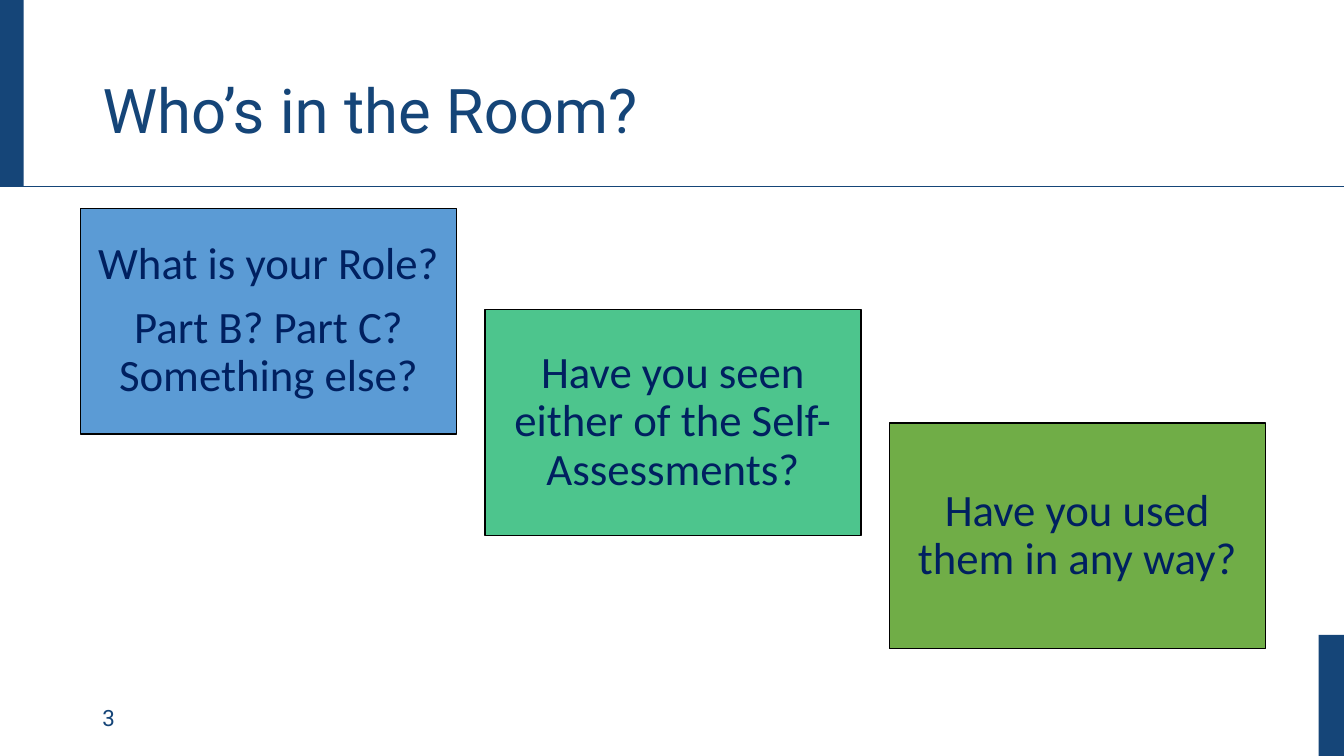
from lxml.etree import SubElement
from pptx import Presentation
from pptx.dml.color import RGBColor
from pptx.enum.shapes import MSO_CONNECTOR, MSO_SHAPE
from pptx.enum.text import MSO_ANCHOR, MSO_AUTO_SIZE, PP_ALIGN
from pptx.oxml.ns import qn
from pptx.util import Cm, Pt

COLORS = {
    "navy": "154578",
    "ink": "002060",
    "black": "000000",
    "blue": "5B9BD5",
    "mint": "4DC58D",
    "green": "70AD47",
}


def color(name):
    return RGBColor.from_string(COLORS[name])


def write_text(shape, paragraphs, *, size, font, ink, align=PP_ALIGN.LEFT,
               line_spacing=1.0, gap=0, margin=None):
    frame = shape.text_frame
    frame.word_wrap = True
    frame.auto_size = MSO_AUTO_SIZE.NONE
    frame.vertical_anchor = MSO_ANCHOR.MIDDLE
    if margin is not None:
        frame.margin_left = frame.margin_right = Cm(margin)
        frame.margin_top = frame.margin_bottom = Cm(margin)
    for index, content in enumerate(paragraphs):
        paragraph = frame.paragraphs[0] if index == 0 else frame.add_paragraph()
        paragraph.alignment = align
        paragraph.line_spacing = line_spacing
        paragraph.space_before = Pt(gap if index else 0)
        run = paragraph.add_run()
        run.text = content
        run.font.size = Pt(size)
        run.font.name = font
        run.font.color.rgb = color(ink)


class SlideBuilder:
    """Hold the style and the current slide, and add each kind of element."""

    heading_font = "Roboto"
    body_font = "Calibri"

    def __init__(self, presentation):
        self.slide = presentation.slides.add_slide(presentation.slide_layouts[5])

    def title(self, text, left, top, width, height):
        title = self.slide.shapes.title
        title.left, title.top = Cm(left), Cm(top)
        title.width, title.height = Cm(width), Cm(height)
        write_text(title, [text], size=44, font=self.heading_font, ink="navy",
                   line_spacing=0.9)

    def rectangle(self, left, top, width, height, fill, outline=None):
        shape = self.slide.shapes.add_shape(
            MSO_SHAPE.RECTANGLE, Cm(left), Cm(top), Cm(width), Cm(height))
        shape.shadow.inherit = False
        shape.fill.solid()
        shape.fill.fore_color.rgb = color(fill)
        if outline:
            shape.line.color.rgb = color(outline)
            shape.line.width = Pt(1)
        else:
            shape.line.fill.background()
        return shape

    def question(self, paragraphs, left, top, fill):
        card = self.rectangle(left, top, 9.48, 5.69, fill, outline="black")
        write_text(card, paragraphs, size=32, font=self.body_font, ink="ink",
                   align=PP_ALIGN.CENTER, line_spacing=0.9, gap=11, margin=0.33)

    def rule(self, left, right, top):
        line = self.slide.shapes.add_connector(
            MSO_CONNECTOR.STRAIGHT, Cm(left), Cm(top), Cm(right), Cm(top))
        line.line.color.rgb = color("navy")
        line.line.width = Pt(0.5)
        SubElement(line._element.spPr, qn("a:effectLst"))

    def page_number(self, number, left, top, width, height):
        box = self.slide.shapes.add_textbox(Cm(left), Cm(top), Cm(width), Cm(height))
        write_text(box, [number], size=16, font=self.heading_font, ink="navy")


def main():
    presentation = Presentation()
    presentation.slide_width, presentation.slide_height = Cm(33.87), Cm(19.05)
    builder = SlideBuilder(presentation)

    builder.rectangle(-0.04, 0, 0.64, 4.7, "navy")
    builder.rectangle(33.23, 16, 0.64, 3.05, "navy")
    builder.rule(-0.04, 33.87, 4.7)
    builder.title("Who’s in the Room?", 2.33, 1.02, 29.21, 3.68)
    builder.page_number("3", 2.33, 17.58, 7.62, 1.02)

    questions = [
        (["What is your Role?", "Part B? Part C? Something else?"], 5.25, "blue"),
        (["Have you seen either of the Self-Assessments?"], 7.8, "mint"),
        (["Have you used them in any way?"], 10.66, "green"),
    ]
    for column, (paragraphs, top, fill) in enumerate(questions):
        builder.question(paragraphs, 2.03 + column * 10.19, top, fill)

    presentation.save("out.pptx")


if __name__ == "__main__":
    main()
